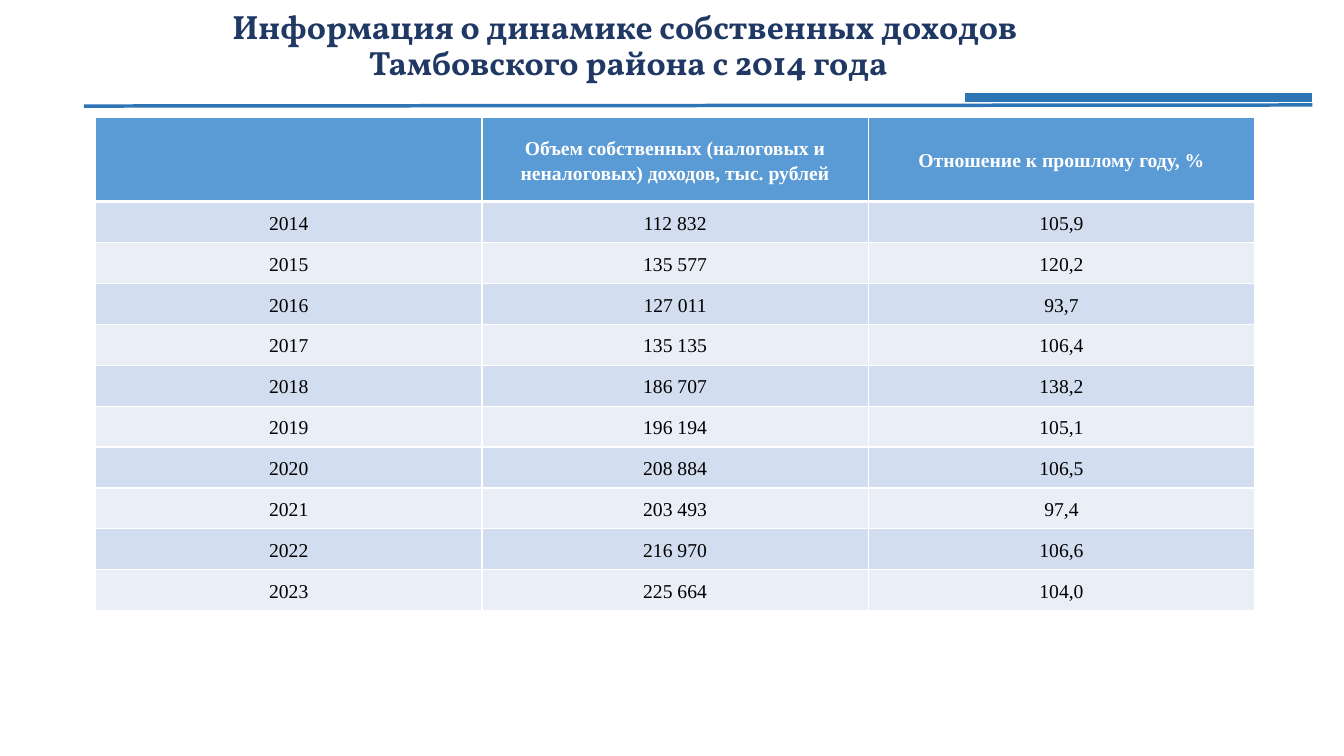
"""Build a slide with a table of Tambov district's own revenues since 2014."""
from lxml import etree
from pptx import Presentation
from pptx.dml.color import RGBColor
from pptx.enum.shapes import MSO_CONNECTOR
from pptx.enum.text import MSO_ANCHOR, PP_ALIGN
from pptx.oxml.ns import qn
from pptx.util import Pt

PX = 9525
CENTER = PP_ALIGN.CENTER
MIDDLE = MSO_ANCHOR.MIDDLE
STRAIGHT = MSO_CONNECTOR.STRAIGHT
THEME = {
    "navy": "203864", "rule": "2E75B6", "head": "5B9BD5", "odd": "D2DEEF",
    "even": "EAEFF7", "white": "FFFFFF", "black": "000000",
    "title": 24, "body": 14, "serif": "Vollkorn", "plain": "Times New Roman",
}
TITLE = "Информация о динамике собственных доходов\v Тамбовского района с 2014 года"
HEADS = ("", "Объем собственных (налоговых и неналоговых) доходов, тыс. рублей",
         "Отношение к прошлому году, %")
DATA = [
    ("2014", "112 832", "105,9"),
    ("2015", "135 577", "120,2"),
    ("2016", "127 011", "93,7"),
    ("2017", "135 135", "106,4"),
    ("2018", "186 707", "138,2"),
    ("2019", "196 194", "105,1"),
    ("2020", "208 884", "106,5"),
    ("2021", "203 493", "97,4"),
    ("2022", "216 970", "106,6"),
    ("2023", "225 664", "104,0"),
]
RULES = [((80, 101, 1250, 100), 2.5), ((919, 93, 1250, 93), 6)]


def write(frame, text, space, face, size, color, bold):
    """Fill a text frame with one centred paragraph."""
    para = frame.paragraphs[0]
    para.text = text
    para.alignment = CENTER
    para.line_spacing = space
    for run in para.runs:
        form = {"name": THEME[face], "size": Pt(THEME[size]), "bold": bold}
        for key, value in form.items():
            setattr(run.font, key, value)
        run.font.color.rgb = RGBColor.from_string(THEME[color])


def edge(cell, widths):
    """Draw white borders of the given widths on a cell."""
    props = cell._tc.get_or_add_tcPr()
    for spot, (side, width) in enumerate(widths.items()):
        line = etree.Element(qn(f"a:ln{side}"), w=str(Pt(width)))
        fill = etree.SubElement(line, qn("a:solidFill"))
        etree.SubElement(fill, qn("a:srgbClr"), val=THEME["white"])
        props.insert(spot, line)


deck = Presentation()
deck.slide_width, deck.slide_height = 1280 * PX, 720 * PX
slide = deck.slides.add_slide(deck.slide_layouts[6])

title = slide.shapes.add_textbox(19 * PX, 0, 1152 * PX, 89 * PX).text_frame
title.word_wrap = True
title.vertical_anchor = MIDDLE
write(title, TITLE, 0.9, "serif", "title", "navy", True)

rows = [HEADS, *DATA]
high = [80] + [39] * len(DATA)
table = slide.shapes.add_table(
    len(rows), len(HEADS), 91 * PX, 112 * PX, 1104 * PX, sum(high) * PX).table
for col in table.columns:
    col.width = 368 * PX
inset = {"margin_left": 7 * PX, "margin_right": 7 * PX, "margin_top": 0,
         "margin_bottom": 0, "vertical_anchor": MIDDLE}
for r, row in enumerate(rows):
    table.rows[r].height = high[r] * PX
    top = r == 0
    tone = "head" if top else "odd" if r % 2 else "even"
    widths = {"L": 1, "R": 1, "T": 3 if r == 1 else 1, "B": 3 if top else 1}
    for c, text in enumerate(row):
        cell = table.cell(r, c)
        for key, value in inset.items():
            setattr(cell, key, value)
        cell.fill.solid()
        cell.fill.fore_color.rgb = RGBColor.from_string(THEME[tone])
        edge(cell, widths)
        write(cell.text_frame, text, 1.15, "plain", "body",
              "white" if top else "black", top)

for ends, width in RULES:
    rule = slide.shapes.add_connector(STRAIGHT, *(n * PX for n in ends))
    rule.line.width = Pt(width)
    rule.line.color.rgb = RGBColor.from_string(THEME["rule"])
    etree.SubElement(rule._element.spPr, qn("a:effectLst"))

deck.save("out.pptx")
